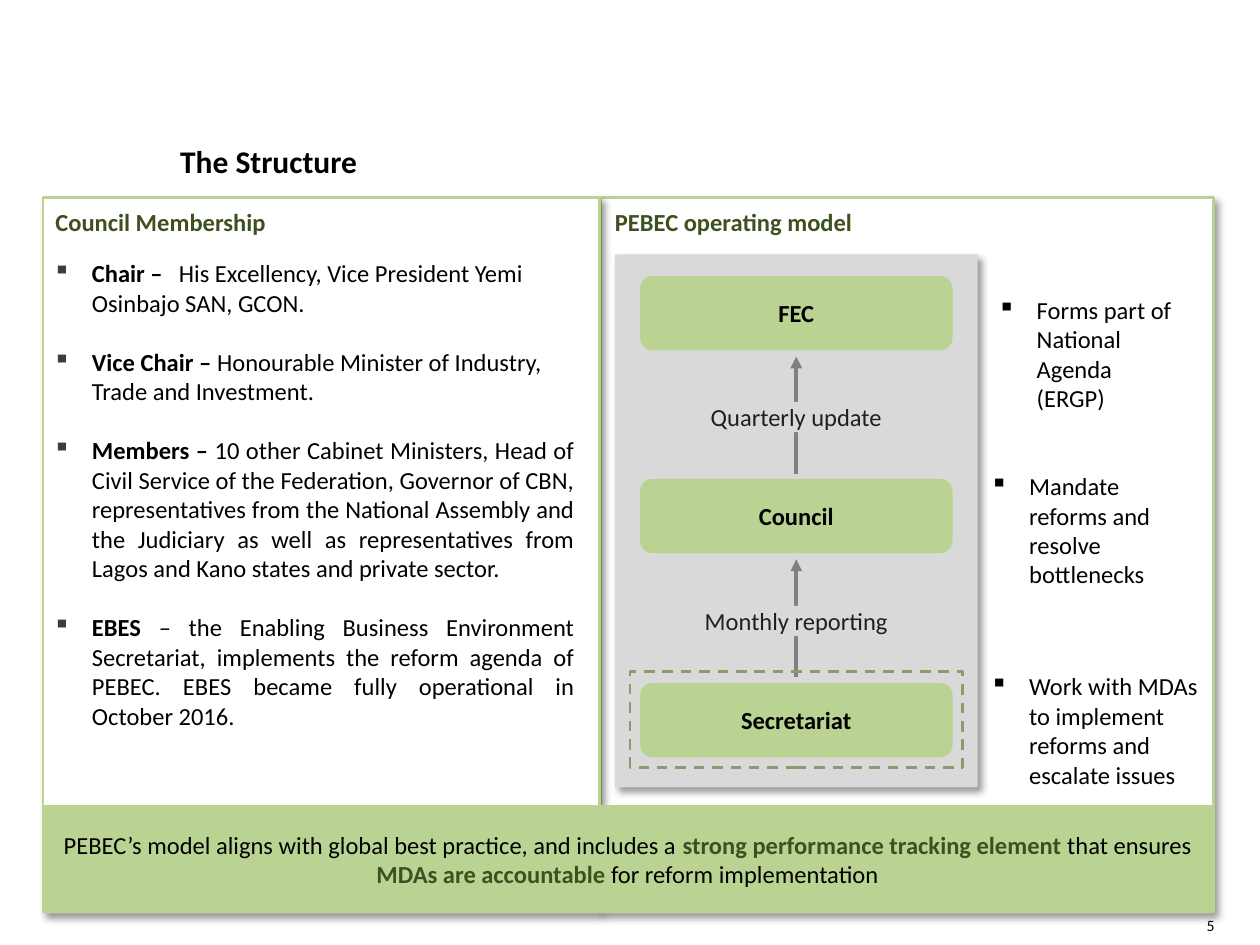
from lxml import etree
from pptx import Presentation
from pptx import util as u
from pptx.dml.color import RGBColor
from pptx.enum import dml, shapes, text
from pptx.oxml import parse_xml
from pptx.oxml.ns import nsdecls, qn

PX = 9144  # EMU per px, 100 px to the inch
FONT = "Calibri"
COLORS = {
    "white": "FFFFFF", "black": "000000", "green": "BAD392", "dark_green": "3E5020",
    "dash_green": "8A9C6C", "panel": "D9D9D9", "arrow": "808080",
    "label": "1F1F1F", "bullet": "3D3D3D",
}
LEFT, CENTER, RIGHT, JUSTIFY = (
    text.PP_ALIGN.LEFT, text.PP_ALIGN.CENTER, text.PP_ALIGN.RIGHT, text.PP_ALIGN.JUSTIFY)
TOP, MIDDLE = text.MSO_ANCHOR.TOP, text.MSO_ANCHOR.MIDDLE


def add_box(box, fill=None, line=None, shadow=False, kind=shapes.MSO_SHAPE.RECTANGLE):
    shape = slide.shapes.add_shape(kind, *[v * PX for v in box])
    shape.shadow.inherit = False
    if fill:
        shape.fill.solid()
        shape.fill.fore_color.rgb = RGBColor.from_string(COLORS[fill])
    else:
        shape.fill.background()
    if line:
        shape.line.color.rgb = RGBColor.from_string(COLORS[line])
        shape.line.width = u.Pt(1.5)
    else:
        shape.line.fill.background()
    if shadow:
        effects = shape._element.spPr.find(qn("a:effectLst"))
        effects.append(parse_xml(
            f'<a:outerShdw {nsdecls("a")} blurRad="50800" dist="38100" dir="2700000" '
            'algn="tl" rotWithShape="0"><a:srgbClr val="000000"><a:alpha val="40000"/>'
            '</a:srgbClr></a:outerShdw>'))
    return shape


def write(shape, paragraphs, align=LEFT, anchor=TOP, insets=(0, 0), size=14,
          bullet=None, gap=0):
    """Fill a shape with paragraphs, each a list of (words, color, bold) runs."""
    frame = shape.text_frame
    side, edge = [v * PX for v in insets]
    settings = {"word_wrap": True, "auto_size": text.MSO_AUTO_SIZE.NONE,
                "vertical_anchor": anchor, "margin_left": side, "margin_right": side,
                "margin_top": edge, "margin_bottom": edge}
    for name, value in settings.items():
        setattr(frame, name, value)
    aligns = align if isinstance(align, list) else [align] * len(paragraphs)
    for index, (runs, alignment) in enumerate(zip(paragraphs, aligns)):
        paragraph = frame.add_paragraph() if index else frame.paragraphs[0]
        paragraph.alignment = alignment
        if index:
            paragraph.space_before = u.Pt(gap)
        if bullet:
            properties = paragraph._p.get_or_add_pPr()
            properties.set("marL", str(31 * PX))
            properties.set("indent", str(-31 * PX))
            color = etree.SubElement(properties, qn("a:buClr"))
            etree.SubElement(color, qn("a:srgbClr"), val=COLORS[bullet])
            etree.SubElement(properties, qn("a:buChar"), char="▪")
        for words, color, bold in runs:
            run = paragraph.add_run()
            run.text = words
            for name, value in {"name": FONT, "size": u.Pt(size), "bold": bold}.items():
                setattr(run.font, name, value)
            run.font.color.rgb = RGBColor.from_string(COLORS[color])


presentation = Presentation()
presentation.slide_width, presentation.slide_height = 1000 * PX, 750 * PX
slide = presentation.slides.add_slide(presentation.slide_layouts[5])

title = slide.shapes.title
title.left, title.top, title.width, title.height = [v * PX for v in (143, 113, 805, 30)]
write(title, [[("The Structure", "black", True)]], anchor=MIDDLE, size=18)

# Panels
for box in [(477, 157, 486, 567), (34, 157, 442, 567)]:
    add_box(box, "white", "green", shadow=True)
add_box((488, 202, 288, 423), "panel", shadow=True)

# Operating model: three levels joined by upward arrows
for level, name in enumerate(["FEC", "Council", "Secretariat"]):
    shape = add_box((508, 219 + level * 323 // 2, 248, 59), "green",
                    kind=shapes.MSO_SHAPE.ROUNDED_RECTANGLE)
    write(shape, [[(name, "black", True)]], CENTER, MIDDLE, (8, 8))

for start, label, box in [
    (376, "Quarterly update", (558, 319, 148, 24)),
    (537, "Monthly reporting", (549, 481, 166, 24)),
]:
    arrow = slide.shapes.add_connector(
        shapes.MSO_CONNECTOR.STRAIGHT, 632 * PX, start * PX, 632 * PX, (start - 93) * PX)
    arrow.line.color.rgb = RGBColor.from_string(COLORS["arrow"])
    arrow.line.width = u.Pt(2.25)
    etree.SubElement(arrow.line._get_or_add_ln(), qn("a:tailEnd"), type="triangle")
    etree.SubElement(arrow._element.spPr, qn("a:effectLst"))
    write(add_box(box, "panel"), [[(label, "label", False)]], CENTER, MIDDLE)

outline = add_box((500, 533, 264, 76), line="dash_green")
outline.line.dash_style = dml.MSO_LINE.DASH

# Conclusion band
write(add_box((34, 639, 928, 86), "green"), [[
    ("PEBEC’s model aligns with global best practice, and includes a ", "black", False),
    ("strong performance tracking element ", "dark_green", True),
    ("that ensures ", "black", False),
    ("MDAs are accountable ", "dark_green", True),
    ("for reform implementation", "black", False),
]], CENTER, MIDDLE, (8, 8))

# Panel headings
for box, heading in [((44, 164, 410, 23), "Council Membership"),
                     ((488, 164, 462, 24), "PEBEC operating model")]:
    textbox = slide.shapes.add_textbox(*[v * PX for v in box])
    write(textbox, [[(heading, "dark_green", True)]])

# Role of each level
for box, role in [
    ((782, 229, 164, 104), "Forms part of National Agenda (ERGP)"),
    ((776, 369, 171, 104), "Mandate reforms and resolve bottlenecks"),
    ((776, 528, 190, 104), "Work with MDAs to implement reforms and escalate issues"),
]:
    textbox = slide.shapes.add_textbox(*[v * PX for v in box])
    write(textbox, [[(role, "black", False)]], insets=(10, 5), bullet="black")

# Council members
members = [
    ("Chair – ", "\tHis Excellency, Vice President Yemi Osinbajo SAN, GCON."),
    ("Vice Chair – ", "Honourable Minister of Industry, Trade and Investment."),
    ("Members – ", "10 other Cabinet Ministers, Head of Civil Service of the Federation, "
     "Governor of CBN, representatives from the National Assembly and the Judiciary as "
     "well as representatives from Lagos and Kano states and private sector."),
    ("EBES ", "– the Enabling Business Environment Secretariat, implements the reform "
     "agenda of PEBEC. EBES became fully operational in October 2016."),
]
textbox = slide.shapes.add_textbox(*[v * PX for v in (42, 205, 414, 377)])
write(textbox, [[(role, "black", True), (detail, "black", False)] for role, detail in members],
      [LEFT, LEFT, JUSTIFY, JUSTIFY], bullet="bullet", gap=17)

# Slide number
textbox = slide.shapes.add_textbox(*[v * PX for v in (949, 727, 15, 15)])
write(textbox, [[("5", "black", False)]], RIGHT, MIDDLE, size=9)

presentation.save("out.pptx")
